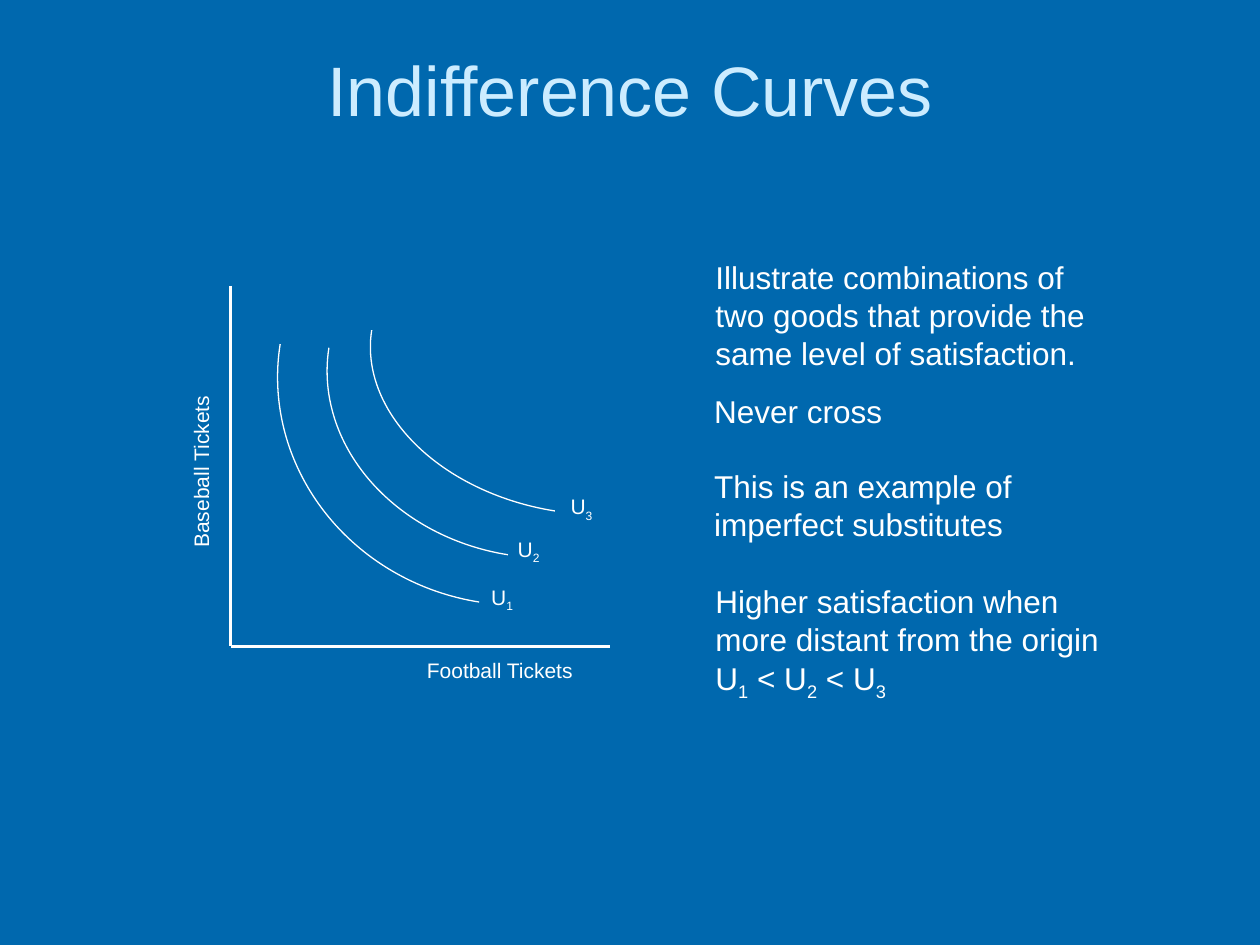
from lxml import etree
from pptx import Presentation
from pptx.dml.color import RGBColor
from pptx.enum import shapes, text
from pptx.oxml import ns
from pptx.util import Inches, Pt

BLUE = RGBColor(0x00, 0x68, 0xAE)
PALE = RGBColor(0xCC, 0xEC, 0xFF)
WHITE = RGBColor(0xFF, 0xFF, 0xFF)


def style_run(r, size, color=WHITE):
    """Apply the slide's font to a run."""
    r.font.name = "Arial"
    r.font.size = Pt(size)
    r.font.color.rgb = color


def add_label(parent, x, y, w, h, parts, size):
    """Add a text box whose every second part is a subscript."""
    sp = parent.add_textbox(Inches(x), Inches(y), Inches(w), Inches(h))
    tf = sp.text_frame
    tf.word_wrap = True
    tf.auto_size = text.MSO_AUTO_SIZE.SHAPE_TO_FIT_TEXT
    for i, part in enumerate(parts):
        r = tf.paragraphs[0].add_run()
        r.text = part
        style_run(r, size)
        if i % 2:
            r._r.get_or_add_rPr().set("baseline", "-25000")
    return sp


def add_axis(parent, x1, y1, x2, y2):
    """Add one white axis line."""
    cx = parent.add_connector(shapes.MSO_CONNECTOR.STRAIGHT,
                              Inches(x1), Inches(y1), Inches(x2), Inches(y2))
    cx.line.color.rgb = WHITE
    cx.line.width = Pt(2)
    etree.SubElement(cx._element.spPr, ns.qn("a:effectLst"))


def add_curve(parent, x, y, w, h):
    """Add one indifference curve as a turned quarter arc."""
    sp = parent.add_shape(shapes.MSO_SHAPE.ARC,
                          Inches(x), Inches(y), Inches(w), Inches(h))
    sp.rotation = 189
    sp.shadow.inherit = False
    sp.fill.background()
    sp.line.color.rgb = WHITE
    sp.line.width = Pt(0.75)


def add_title(s, x, y, w, h):
    """Fill and place the title placeholder."""
    sp = s.shapes.title
    sp.left, sp.top, sp.width, sp.height = map(Inches, (x, y, w, h))
    tf = sp.text_frame
    tf.text = "Indifference Curves"
    tf.vertical_anchor = text.MSO_ANCHOR.MIDDLE
    p = tf.paragraphs[0]
    p.alignment = text.PP_ALIGN.CENTER
    style_run(p.runs[0], 40, PALE)


def add_graph(s, x, y, w, h):
    """Draw the axes, their names and the three labelled curves."""
    parent = s.shapes.add_group_shape().shapes
    add_axis(parent, x, y, x, y + h)
    add_axis(parent, x + w, y + h, x, y + h)
    sp = add_label(parent, x - 1.2, y + 0.98, 2.01, 0.38, ["Baseball Tickets"], 12)
    sp.rotation = 270
    add_label(parent, x + 1.46, y + h + 0.04, 1.76, 0.42, ["Football Tickets"], 12)
    labels = [(1.97, 2.32), (2.18, 1.94), (2.6, 1.6)]
    for i, (dx, dy) in enumerate(labels, 1):
        add_label(parent, x + dx, y + dy, 0.73, 0.42, ["U", str(i)], 12)
    curves = [(0.37, -1.02, 3.76, 3.55), (0.76, -0.65, 3.32, 2.8),
              (1.1, -0.58, 3.32, 2.38)]
    for dx, dy, cw, ch in curves:
        add_curve(parent, x + dx, y + dy, cw, ch)


def add_notes(s, x, y, w):
    """Write the column of statements beside the graph."""
    notes = [
        (0, 3.18, 2.92, 0.4, ["U", "1", " < U", "2", " < U", "3"]),
        (0, 0, w, 1.01, ["Illustrate combinations of two goods that provide "
                         "the same level of satisfaction."]),
        (-0.01, 1.06, w, 0.4, ["Never cross"]),
        (-0.01, 1.66, w, 0.71, ["This is an example of imperfect substitutes"]),
        (0, 2.57, w, 0.71, ["Higher satisfaction when more distant from the origin"]),
    ]
    for dx, dy, nw, nh, parts in notes:
        add_label(s.shapes, x + dx, y + dy, nw, nh, parts, 18)


def main():
    """Build and save the slide."""
    prs = Presentation()
    prs.slide_width, prs.slide_height = Inches(10), Inches(7.5)
    s = prs.slides.add_slide(prs.slide_layouts[5])
    s.background.fill.solid()
    s.background.fill.fore_color.rgb = BLUE
    add_title(s, 0.5, 0.08, 9, 1.25)
    add_graph(s, 1.83, 2.27, 3.01, 2.86)
    add_notes(s, 5.58, 2, 3.33)
    prs.save("out.pptx")


if __name__ == "__main__":
    main()
